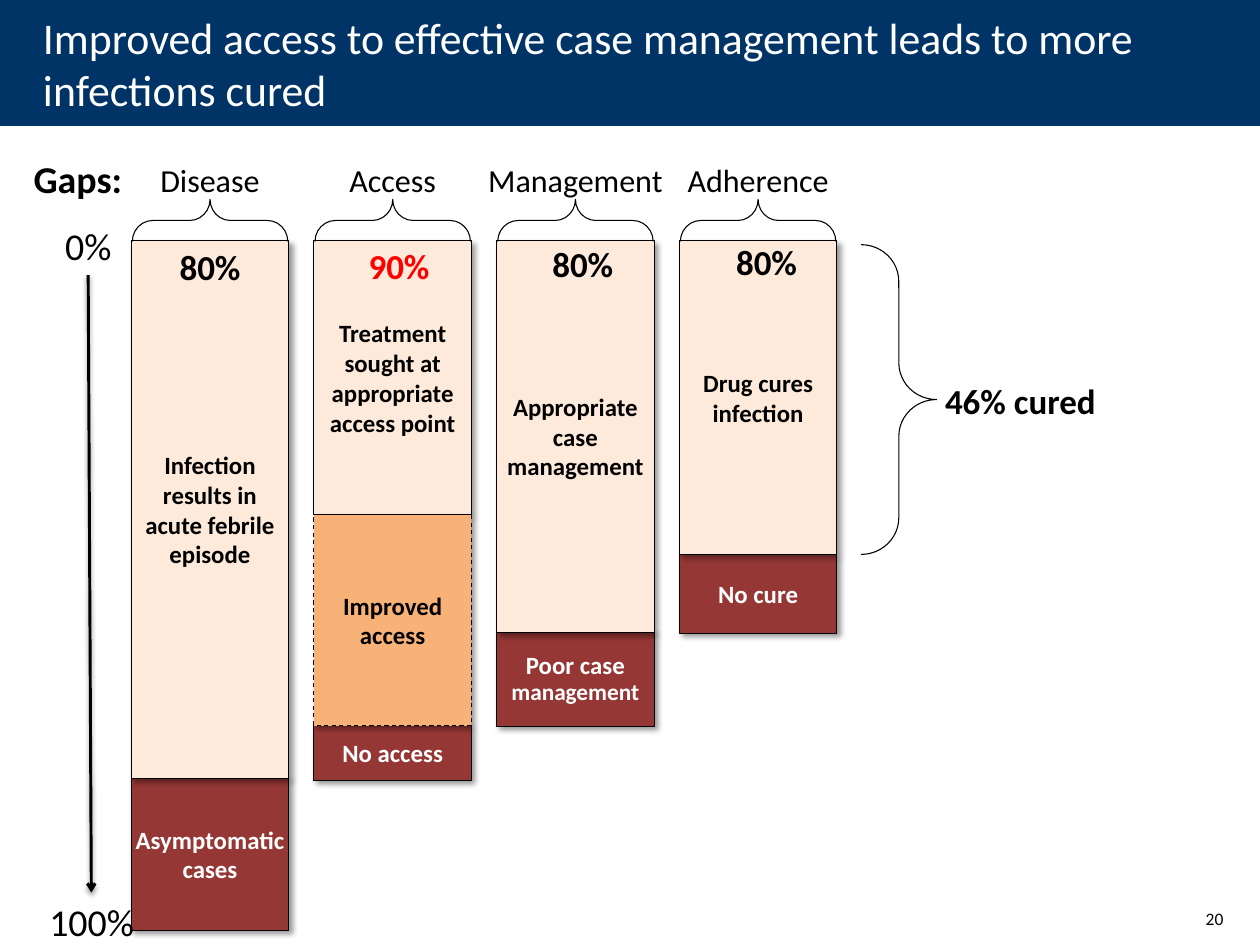
from lxml import etree
from pptx import Presentation
from pptx.dml.color import RGBColor
from pptx.enum.dml import MSO_LINE
from pptx.enum.shapes import MSO_CONNECTOR, MSO_SHAPE
from pptx.enum.text import MSO_ANCHOR, PP_ALIGN
from pptx.oxml.ns import qn
from pptx.util import Inches, Pt

LEFT, CENTER, RIGHT = PP_ALIGN.LEFT, PP_ALIGN.CENTER, PP_ALIGN.RIGHT
TOP, MIDDLE, BOTTOM = MSO_ANCHOR.TOP, MSO_ANCHOR.MIDDLE, MSO_ANCHOR.BOTTOM
RECT, BOX, BRACE = MSO_SHAPE.RECTANGLE, MSO_SHAPE.FLOWCHART_PROCESS, MSO_SHAPE.LEFT_BRACE
STRAIGHT, DASH = MSO_CONNECTOR.STRAIGHT, MSO_LINE.DASH

WIDTH, HEIGHT = 12, 9
BLACK, WHITE, RED, NAVY = "000000", "FFFFFF", "FF0000", "003366"
TITLE = "Improved access to effective case management leads to more infections cured"

# kind: fill, text colour, dash; in drawing order
KINDS = {
    "lost": ("953735", WHITE, None),
    "kept": ("FDEADA", BLACK, None),
    "gained": ("F8B278", BLACK, DASH),
}
BARS = [
    ("Disease", "80%", BLACK, (0.34, 2.28), [
        ("kept", 5.12, 0.12, [("Infection results in acute febrile episode", 17)]),
        ("lost", 1.45, 0, [("Asymptomatic cases", 17)])]),
    ("Access", "90%", RED, (0.4, 2.27), [
        ("kept", 2.61, 0.12, [("Treatment sought at appropriate access point", 17)]),
        ("gained", 2.01, 0.12, [("Improved access", 17)]),
        ("lost", 0.52, 0.12, [("No access", 17)])]),
    ("Management", "80%", BLACK, (0.41, 2.25), [
        ("kept", 3.73, 0.06, [("Appropriate case management", 17)]),
        ("lost", 0.9, 0.12, [("Poor case ", 17), ("management", 16)])]),
    ("Adherence", "80%", BLACK, (0.42, 2.23), [
        ("kept", 2.99, 0.12, [("Drug cures infection", 17)]),
        ("lost", 0.75, 0.12, [("No cure", 17)])]),
]
LABELS = [
    ("Gaps:", (0.2, 1.42, 1.1, 0.56), 26, True),
    ("0%", (0.5, 2.06, 0.69, 0.56), 26, False),
    ("100%", (0.35, 8.5, 1.06, 0.56), 26, False),
    ("46% cured", (8.88, 3.55, 1.69, 0.53), 24, True),
]
BAR_LEFT, BAR_TOP, BAR_WIDTH, BAR_PITCH = 1.25, 2.29, 1.5, 1.74
BRACE_DEPTH, BRACE_SPAN, BRACE_MID = 0.4, 1.48, 2.1


def rgb(value):
    return RGBColor.from_string(value)


def add_shadow(sp, alpha, blur, dist, angle):
    pr = sp._element.spPr
    effects = pr.find(qn("a:effectLst"))
    if effects is None:
        effects = etree.SubElement(pr, qn("a:effectLst"))
    shadow = etree.SubElement(effects, qn("a:outerShdw"), blurRad=str(Pt(blur)),
                              dist=str(Pt(dist)), dir=str(angle * 60000), rotWithShape="0")
    color = etree.SubElement(shadow, qn("a:srgbClr"), val=BLACK)
    etree.SubElement(color, qn("a:alpha"), val=str(alpha * 1000))


def write(sp, runs, color=BLACK, bold=False, align=LEFT, anchor=TOP, pad=(0.12, 0.06), wrap=True):
    tf = sp.text_frame
    x, y = (Inches(v) for v in pad)
    frame = {"word_wrap": wrap, "vertical_anchor": anchor, "margin_left": x,
             "margin_right": x, "margin_top": y, "margin_bottom": y}
    for name, value in frame.items():
        setattr(tf, name, value)
    p = tf.paragraphs[0]
    p.alignment = align
    for text, size in runs:
        r = p.add_run()
        r.text = text
        for name, value in {"name": "Calibri", "size": Pt(size), "bold": bold}.items():
            setattr(r.font, name, value)
        r.font.color.rgb = rgb(color)
    return p


def add_text(slide, at, *args, **kwargs):
    return write(slide.shapes.add_textbox(*map(Inches, at)), *args, **kwargs)


def add_shape(slide, kind, at, fill=None, line=BLACK, dash=None):
    sp = slide.shapes.add_shape(kind, *map(Inches, at))
    sp.shadow.inherit = False
    if fill:
        sp.fill.solid()
        sp.fill.fore_color.rgb = rgb(fill)
    else:
        sp.fill.background()
    if line:
        sp.line.color.rgb = rgb(line)
        sp.line.width = Pt(0.75)
        if dash:
            sp.line.dash_style = dash
    else:
        sp.line.fill.background()
    return sp


def add_brace(slide, at, rotation):
    sp = add_shape(slide, BRACE, at)
    sp.rotation = rotation
    sp.adjustments[0] = 0.486


def add_segment(slide, at, kind, pad, runs):
    fill, color, dash = KINDS[kind]
    sp = add_shape(slide, BOX, at, fill, dash=dash)
    add_shadow(sp, 40, 4, 3, 45)
    p = write(sp, runs, color, True, CENTER, MIDDLE, (pad, min(pad, 0.06)))
    if len(runs) > 1:
        p.line_spacing = Pt(18)


def add_bar(slide, left, bar):
    name, share, color, (dx, share_top), segments = bar
    placed, top = [], BAR_TOP
    for kind, height, pad, runs in segments:
        placed.append(((left, top, BAR_WIDTH, height), kind, pad, runs))
        top += height
    for segment in sorted(placed, key=lambda s: list(KINDS).index(s[1])):
        add_segment(slide, *segment)
    mid = left + BAR_WIDTH / 2
    add_brace(slide, (mid - BRACE_DEPTH / 2, BRACE_MID - BRACE_SPAN / 2,
                      BRACE_DEPTH, BRACE_SPAN), 90)
    add_text(slide, (mid - 1, 1.47, 2, 0.5), [(name, 22)], align=CENTER)
    add_text(slide, (left + dx, share_top, 0.83, 0.53), [(share, 24)], color, True, wrap=False)


def add_scale_arrow(slide):
    s = slide.shapes.add_connector(STRAIGHT, *map(Inches, (0.84, 2.62, 0.87, 8.5)))
    s.line.color.rgb = rgb(BLACK)
    s.line.width = Pt(2)
    etree.SubElement(s.line._get_or_add_ln(), qn("a:tailEnd"), type="arrow")
    add_shadow(s, 38, 3.1, 1.6, 90)


def main():
    """Build the slide on access to case management and save it."""
    prs = Presentation()
    prs.slide_width, prs.slide_height = Inches(WIDTH), Inches(HEIGHT)
    slide = prs.slides.add_slide(prs.slide_layouts[6])
    band = add_shape(slide, RECT, (0, 0, WIDTH, 1.2), NAVY, None)
    write(band, [(TITLE, 30)], WHITE, anchor=MIDDLE, pad=(0.41, 0.05))
    for i, bar in enumerate(BARS):
        add_bar(slide, BAR_LEFT + i * BAR_PITCH, bar)
    add_scale_arrow(slide)
    add_brace(slide, (8.2, 2.33, 0.72, 2.95), 180)
    for text, at, size, bold in LABELS:
        add_text(slide, at, [(text, size)], bold=bold, wrap=False)
    add_text(slide, (8.95, 8.27, 2.8, 0.63), [("20", 12)], align=RIGHT,
             anchor=BOTTOM, pad=(0.1, 0.05))
    prs.save("out.pptx")


if __name__ == "__main__":
    main()
